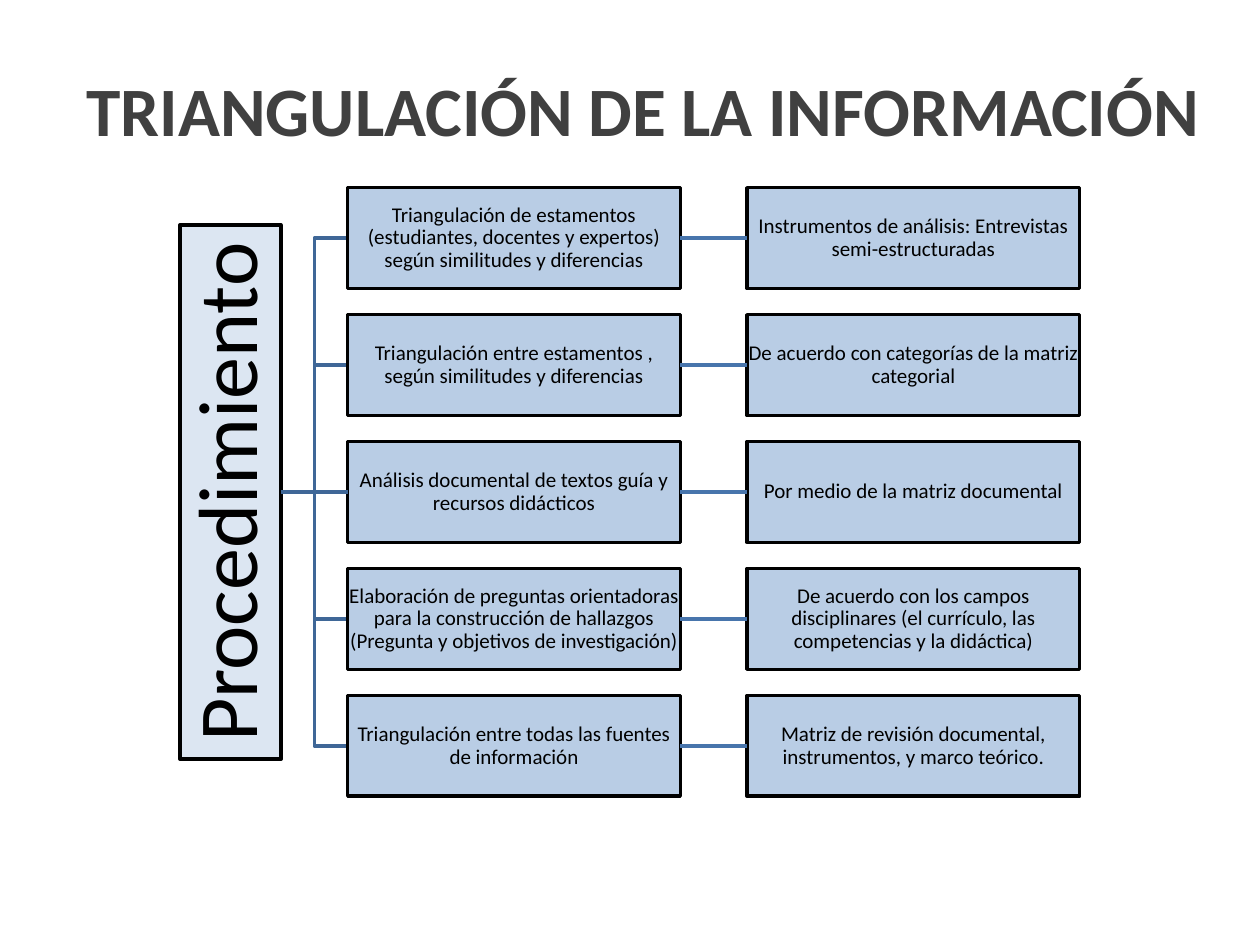
import pptx
import pptx.util
import pptx.dml.color
import pptx.enum.shapes
import pptx.enum.text
import pptx.oxml.ns
import lxml.etree

FONT = "Calibri"
BOX_WIDTH, BOX_HEIGHT = 2.64, 0.8
COLUMNS = (2.76, 5.93)
FIRST_TOP, LAST_TOP = 1.49, 5.52
ROOT_LENGTH, ROOT_CENTER = 4.24, 1.83
ROOT_EDGE = ROOT_CENTER + BOX_HEIGHT / 2
TRUNK = (ROOT_EDGE + COLUMNS[0]) / 2
BRANCH_COLOR, LINK_COLOR = "3F6797", "4875AC"

STEPS = [
    ("Triangulación de estamentos (estudiantes, docentes y expertos) según similitudes y diferencias",
     "Instrumentos de análisis: Entrevistas semi-estructuradas"),
    ("Triangulación entre estamentos , según similitudes y diferencias",
     "De acuerdo con categorías de la matriz categorial"),
    ("Análisis documental de textos guía y recursos didácticos",
     "Por medio de la matriz documental"),
    ("Elaboración de preguntas orientadoras para la construcción de hallazgos "
     "(Pregunta y objetivos de investigación)",
     "De acuerdo con los campos disciplinares (el currículo, las competencias y la didáctica)"),
    ("Triangulación entre todas las fuentes de información",
     "Matriz de revisión documental, instrumentos, y marco teórico."),
]


def inches(value):
    """Convert inches to a length."""
    return pptx.util.Inches(value)


def rgb(value):
    """Convert a hex string to a colour."""
    return pptx.dml.color.RGBColor.from_string(value)


def write(shape, text, size=12, color="000000", bold=False, spacing=0.9, inset=0.01):
    """Put one centred, formatted paragraph in a shape."""
    frame = shape.text_frame
    frame.text = text
    frame.word_wrap = True
    frame.auto_size = pptx.enum.text.MSO_AUTO_SIZE.NONE
    frame.vertical_anchor = pptx.enum.text.MSO_ANCHOR.MIDDLE
    frame.margin_left = frame.margin_right = inches(inset)
    frame.margin_top = frame.margin_bottom = inches(inset)
    paragraph = frame.paragraphs[0]
    paragraph.alignment = pptx.enum.text.PP_ALIGN.CENTER
    paragraph.line_spacing = spacing
    font = paragraph.runs[0].font
    font.name, font.size, font.bold = FONT, pptx.util.Pt(size), bold
    font.color.rgb = rgb(color)


def style_line(line, color):
    """Give an outline its colour and width."""
    line.color.rgb = rgb(color)
    line.width = pptx.util.Pt(2)


def add_box(slide, left, top, width, fill, text, **text_format):
    """Add an outlined rectangle with text."""
    box = slide.shapes.add_shape(
        pptx.enum.shapes.MSO_SHAPE.RECTANGLE,
        inches(left), inches(top), inches(width), inches(BOX_HEIGHT))
    box.shadow.inherit = False
    box.fill.solid()
    box.fill.fore_color.rgb = rgb(fill)
    style_line(box.line, "000000")
    write(box, text, **text_format)
    return box


def add_link(slide, start, start_side, end, color):
    """Join a side of one box to the left side of another."""
    link = slide.shapes.add_connector(pptx.enum.shapes.MSO_CONNECTOR.STRAIGHT, 0, 0, 0, 0)
    link.begin_connect(start, start_side)
    link.end_connect(end, 1)
    style_line(link.line, color)
    lxml.etree.SubElement(link._element.spPr, pptx.oxml.ns.qn("a:effectLst"))
    return link


def add_branch(slide, root_y, step_y):
    """Draw an elbow from the root to a step."""
    points = [(TRUNK, root_y), (TRUNK, step_y), (COLUMNS[0], step_y)]
    builder = slide.shapes.build_freeform(inches(ROOT_EDGE), inches(root_y))
    builder.add_line_segments([(inches(x), inches(y)) for x, y in points], close=False)
    branch = builder.convert_to_shape()
    branch.shadow.inherit = False
    branch.fill.background()
    style_line(branch.line, BRANCH_COLOR)


def add_title(slide, text):
    """Place and format the slide title."""
    title = slide.shapes.title
    title.left, title.top = inches(0.5), inches(0.24)
    title.width, title.height = inches(9.21), inches(1.25)
    write(title, text, size=39.6, color="404040", bold=True, spacing=1.0, inset=0.05)


def add_procedure(slide):
    """Draw the root, its steps and their instruments."""
    pitch = (LAST_TOP - FIRST_TOP) / (len(STEPS) - 1)
    tops = [FIRST_TOP + row * pitch for row in range(len(STEPS))]
    middle = len(STEPS) // 2
    root_y = tops[middle] + BOX_HEIGHT / 2
    for row, top in enumerate(tops):
        if row != middle:
            add_branch(slide, root_y, top + BOX_HEIGHT / 2)
    root = add_box(slide, ROOT_CENTER - ROOT_LENGTH / 2, tops[middle], ROOT_LENGTH,
                   "DCE6F2", "Procedimiento", size=48, inset=0.03)
    root.rotation = 270
    for row, (top, texts) in enumerate(zip(tops, STEPS)):
        step, instrument = [add_box(slide, left, top, BOX_WIDTH, "B9CDE5", text)
                            for left, text in zip(COLUMNS, texts)]
        add_link(slide, step, 3, instrument, LINK_COLOR)
        if row == middle:
            stem = add_link(slide, root, 2, step, BRANCH_COLOR)
            stem.begin_x, stem.begin_y = inches(ROOT_EDGE), stem.end_y


def main():
    """Build and save the slide."""
    deck = pptx.Presentation()
    deck.slide_width, deck.slide_height = inches(10), inches(7.5)
    slide = deck.slides.add_slide(deck.slide_layouts[5])
    add_title(slide, "TRIANGULACIÓN DE LA INFORMACIÓN")
    add_procedure(slide)
    deck.save("out.pptx")


if __name__ == "__main__":
    main()
